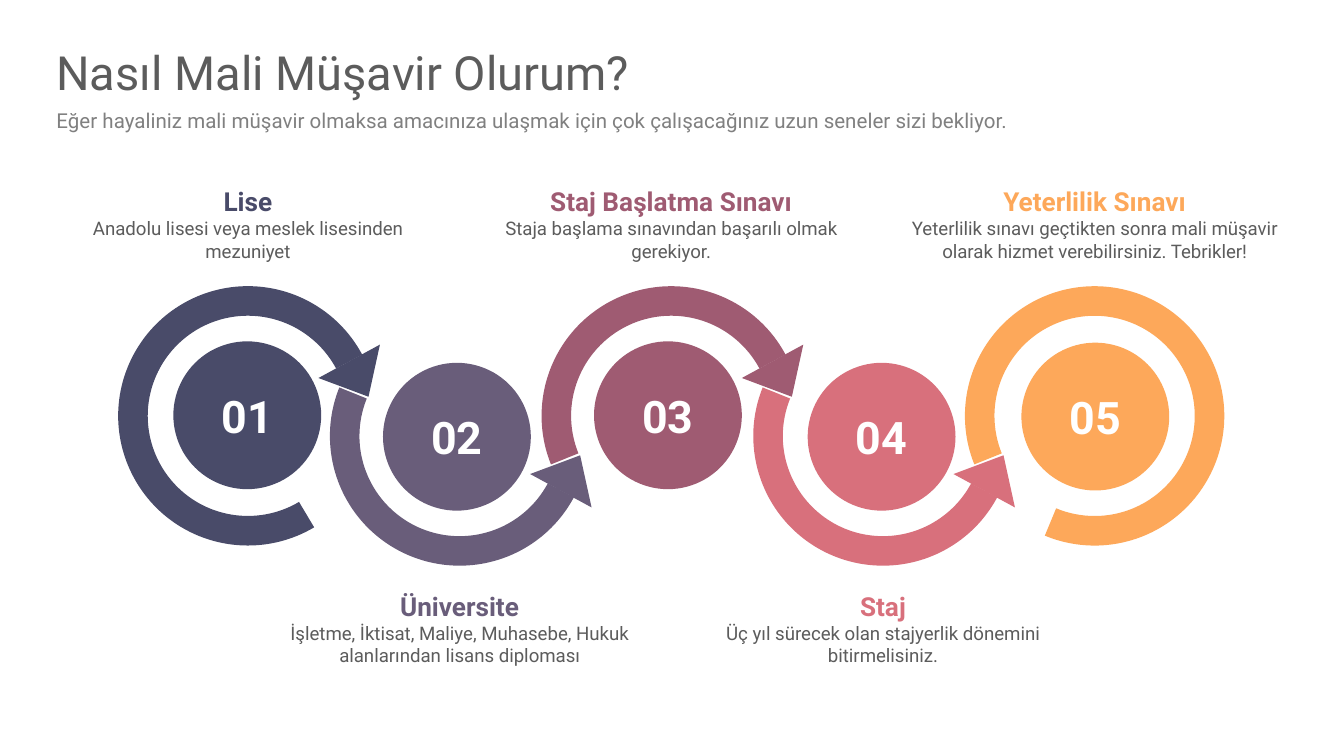
"""Build a slide showing the five steps to becoming a financial advisor."""
from copy import deepcopy

from pptx import Presentation
from pptx import util as u
from pptx.dml.color import RGBColor
from pptx.enum import shapes, text
from pptx.oxml.ns import qn

COLORS = {
    "title": "5C5C5C", "subtitle": "808080", "body": "5C5C5C", "number": "FFFFFF",
    "navy": "494B69", "purple": "695D7A", "plum": "9F5B72",
    "rose": "D8707C", "orange": "FDA85A",
}
STEPS = [
    ("Lise", "Anadolu lisesi veya meslek lisesinden mezuniyet", "navy", 1.29, 2.54),
    ("Üniversite", "İşletme, İktisat, Maliye, Muhasebe, Hukuk alanlarından lisans diploması",
     "purple", 2.85, 2.7),
    ("Staj Başlatma Sınavı", "Staja başlama sınavından başarılı olmak gerekiyor.",
     "plum", 4.42, 2.54),
    ("Staj", "Üç yıl sürecek olan stajyerlik dönemini bitirmelisiniz.", "rose", 6.01, 2.7),
    ("Yeterlilik Sınavı",
     "Yeterlilik sınavı geçtikten sonra mali müşavir olarak hizmet verebilirsiniz. Tebrikler!",
     "orange", 7.6, 2.55),
]
PITCH = 6.3 / 4
RING = 1.93
ARC_START, ARC_END, ARC_BAND = 94.81, 199.08, 0.22 / RING

presentation = Presentation()
presentation.slide_width = u.Inches(10)
presentation.slide_height = u.Inches(10 * 9 / 16)
slide = presentation.slides.add_slide(presentation.slide_layouts[6])


def add_filled(kind, left, top, width, height, color):
    shape = slide.shapes.add_shape(
        kind, u.Inches(left), u.Inches(top), u.Inches(width), u.Inches(height))
    shape.shadow.inherit = False
    shape.fill.solid()
    shape.fill.fore_color.rgb = RGBColor.from_string(COLORS[color])
    shape.line.fill.background()
    return shape


def style_run(run, size, color, bold=False):
    run.font.name = "Roboto"
    run.font.size = u.Pt(size)
    run.font.bold = bold
    run.font.color.rgb = RGBColor.from_string(COLORS[color])


headers = [
    ("Eğer hayaliniz mali müşavir olmaksa amacınıza ulaşmak için çok çalışacağınız "
     "uzun seneler sizi bekliyor.", 0.8, 0.19, 11, "subtitle"),
    ("Nasıl Mali Müşavir Olurum?", 0.31, 0.45, 25.2, "title"),
]
for wording, top, height, size, color in headers:
    header = slide.shapes.add_textbox(
        u.Inches(0.42), u.Inches(top), u.Inches(9.15), u.Inches(height)).text_frame
    header.margin_left = header.margin_right = header.margin_top = header.margin_bottom = 0
    header.word_wrap = True
    header.vertical_anchor = text.MSO_ANCHOR.MIDDLE
    header.text = wording
    style_run(header.paragraphs[0].runs[0], size, color)

last = len(STEPS) - 1
for index, (heading, detail, color, circle_left, circle_top) in enumerate(STEPS):
    lower = index % 2 == 1
    offset = index * PITCH

    arc = add_filled(shapes.MSO_SHAPE.BLOCK_ARC, 0.88 + offset,
                     2.28 if lower else 2.13, RING, RING, color)
    arc.adjustments[0] = 35.56 if index == 0 else ARC_START
    arc.adjustments[1] = 67.55 if index == last else ARC_END
    arc.adjustments[2] = ARC_BAND
    ring_parts = [arc]

    if index < last:
        arrowhead = add_filled(shapes.MSO_SHAPE.ISOSCELES_TRIANGLE, 2.41 + offset,
                               3.37 if lower else 2.67, 0.52, 0.3, color)
        arrowhead.rotation = 208.5 if lower else 151.5
        ring_parts.append(arrowhead)
    if lower:
        for part in ring_parts:
            part.element.spPr.find(qn("a:xfrm")).set("flipV", "1")

    circle = add_filled(shapes.MSO_SHAPE.OVAL, circle_left, circle_top, 1.1, 1.1, color)
    number = circle.text_frame
    number.vertical_anchor = text.MSO_ANCHOR.MIDDLE
    number.text = f"{index + 1:02d}"
    number.paragraphs[0].alignment = text.PP_ALIGN.CENTER
    style_run(number.paragraphs[0].runs[0], 24, "number", True)

    caption = slide.shapes.add_textbox(
        u.Inches(0.43 + offset), u.Inches(4.39 if lower else 1.38),
        u.Inches(2.83), u.Inches(0.57)).text_frame
    caption.margin_left = caption.margin_right = caption.margin_top = caption.margin_bottom = 0
    caption.word_wrap = True
    caption.auto_size = text.MSO_AUTO_SIZE.SHAPE_TO_FIT_TEXT
    caption.vertical_anchor = text.MSO_ANCHOR.MIDDLE
    paragraph = caption.paragraphs[0]
    paragraph.text = f"{heading}\v{detail}"
    paragraph.alignment = text.PP_ALIGN.CENTER
    paragraph.space_after = u.Pt(9)
    heading_run, detail_run = paragraph.runs
    style_run(heading_run, 14, color, True)
    style_run(detail_run, 10, "body")
    paragraph._p.find(qn("a:br")).append(deepcopy(heading_run._r.rPr))

presentation.save("out.pptx")
